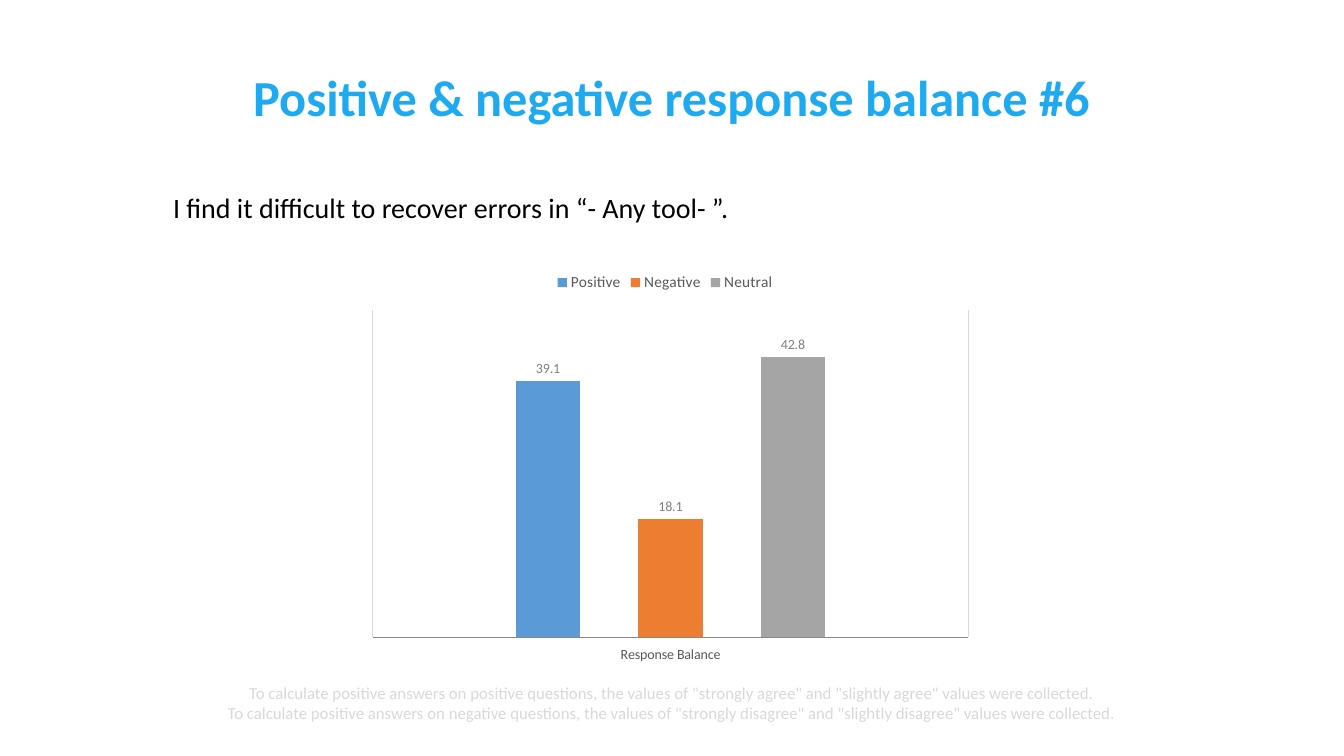
"""Build the response balance slide with its clustered column chart."""
from lxml.etree import SubElement
from pptx import Presentation
from pptx.chart.data import CategoryChartData as Data
from pptx.dml.color import RGBColor as Rgb
from pptx.enum.chart import XL_CHART_TYPE as Kind
from pptx.enum.chart import XL_LABEL_POSITION as Spot
from pptx.enum.chart import XL_LEGEND_POSITION as Side
from pptx.enum.chart import XL_TICK_LABEL_POSITION as Tick
from pptx.enum.chart import XL_TICK_MARK as Mark
from pptx.enum.text import MSO_ANCHOR as Anchor
from pptx.enum.text import MSO_AUTO_SIZE as Fit
from pptx.enum.text import PP_ALIGN as Align
from pptx.oxml import parse_xml
from pptx.oxml.ns import nsdecls, qn
from pptx.util import Cm, Pt

HUES = {
    "title": "1EAAF0", "text": "000000", "note": "D9D9D9",
    "label": "595959", "value": "808080", "axis": "888888", "grid": "D9D9D9",
    "Positive": "5B9BD5", "Negative": "ED7D31", "Neutral": "A5A5A5",
}


def style(font, size, hue, bold=False):
    font.name = "Calibri"
    font.size = Pt(size)
    font.bold = bold
    font.color.rgb = Rgb.from_string(HUES[hue])


def fill(shape, box, anchor, align, lines, look):
    shape.left, shape.top, shape.width, shape.height = map(Cm, box)
    frame = shape.text_frame
    frame.word_wrap = True
    frame.auto_size = Fit.NONE
    frame.vertical_anchor = anchor
    frame.margin_left = frame.margin_right = Cm(0.13)
    frame.margin_top = frame.margin_bottom = Cm(0.13)
    for i, line in enumerate(lines):
        para = frame.add_paragraph() if i else frame.paragraphs[0]
        para.alignment = align
        run = para.add_run()
        run.text = line
        style(run.font, *look)
    return frame.paragraphs[0]


deck = Presentation()
deck.slide_width, deck.slide_height = Cm(33.87), Cm(19.05)
slide = deck.slides.add_slide(deck.slide_layouts[0])

note = slide.shapes.add_textbox(0, 0, 0, 0)
fill(note, (0.13, 17.09, 33.6, 1.22), Anchor.MIDDLE, Align.CENTER, [
    'To calculate positive answers on positive questions, the values of '
    '"strongly agree" and "slightly agree" values were collected.',
    'To calculate positive answers on negative questions, the values of '
    '"strongly disagree" and "slightly disagree" values were collected.',
], (12, "note"))

head = fill(slide.shapes.title, (4.23, 1.7, 25.4, 1.65), Anchor.BOTTOM,
            Align.CENTER, ["Positive & negative response balance #6"],
            (36, "title", True))
head.line_spacing = 0.9

body = fill(slide.placeholders[1], (4.23, 4.24, 25.4, 3.81), Anchor.TOP,
            Align.LEFT,
            ["I find it difficult to recover errors in “- Any tool- ”."],
            (20, "text"))
body.line_spacing = 1.5
body.space_before = Pt(10)

data = Data(number_format="0.#")
data.categories = ["Response Balance"]
for name, value in (("Positive", 39.1), ("Negative", 18.1), ("Neutral", 42.8)):
    data.add_series(name, [value])
chart = slide.shapes.add_chart(Kind.COLUMN_CLUSTERED, Cm(9.04), Cm(6.6),
                               Cm(15.44), Cm(10.11), data).chart
style(chart.font, 10, "text")
chart.has_title = False
chart.has_legend = True
chart.legend.position = Side.TOP
chart.legend.include_in_layout = True
style(chart.legend.font, 11, "label")

plot = chart.plots[0]
plot.gap_width = 444
plot.overlap = -90
plot.vary_by_categories = False
for bar in plot.series:
    bar.format.fill.solid()
    bar.format.fill.fore_color.rgb = Rgb.from_string(HUES[bar.name])
    tags = bar.data_labels
    tags.show_value = True
    tags.position = Spot.OUTSIDE_END
    tags.number_format = "0.#"
    tags.number_format_is_linked = False
    style(tags.font, 10, "value")

base = chart.category_axis
base.tick_label_position = Tick.LOW
base.has_major_gridlines = True
style(base.tick_labels.font, 10, "label")
for line, hue in ((base.format.line, "axis"),
                  (base.major_gridlines.format.line, "grid")):
    line.width = Pt(1)
    line.color.rgb = Rgb.from_string(HUES[hue])

scale = chart.value_axis
scale.minimum_scale, scale.maximum_scale = 0, 50
scale.major_unit = 12.5
scale.has_major_gridlines = False
scale.tick_label_position = Tick.NONE
scale.format.line.fill.background()
for axis in (base, scale):
    axis.major_tick_mark = axis.minor_tick_mark = Mark.NONE

area = chart._chartSpace.find(".//" + qn("c:plotArea"))
for old in area.findall(qn("c:layout")):
    area.remove(old)
layout = parse_xml(f"<c:layout {nsdecls('c')}><c:manualLayout/></c:layout>")
for tag, val in (("layoutTarget", "inner"), ("xMode", "edge"),
                 ("yMode", "edge"), ("x", "0.023"), ("y", "0.119"),
                 ("w", "0.972"), ("h", "0.819")):
    SubElement(layout[0], qn("c:" + tag)).set("val", val)
area.insert(0, layout)

deck.save("out.pptx")
